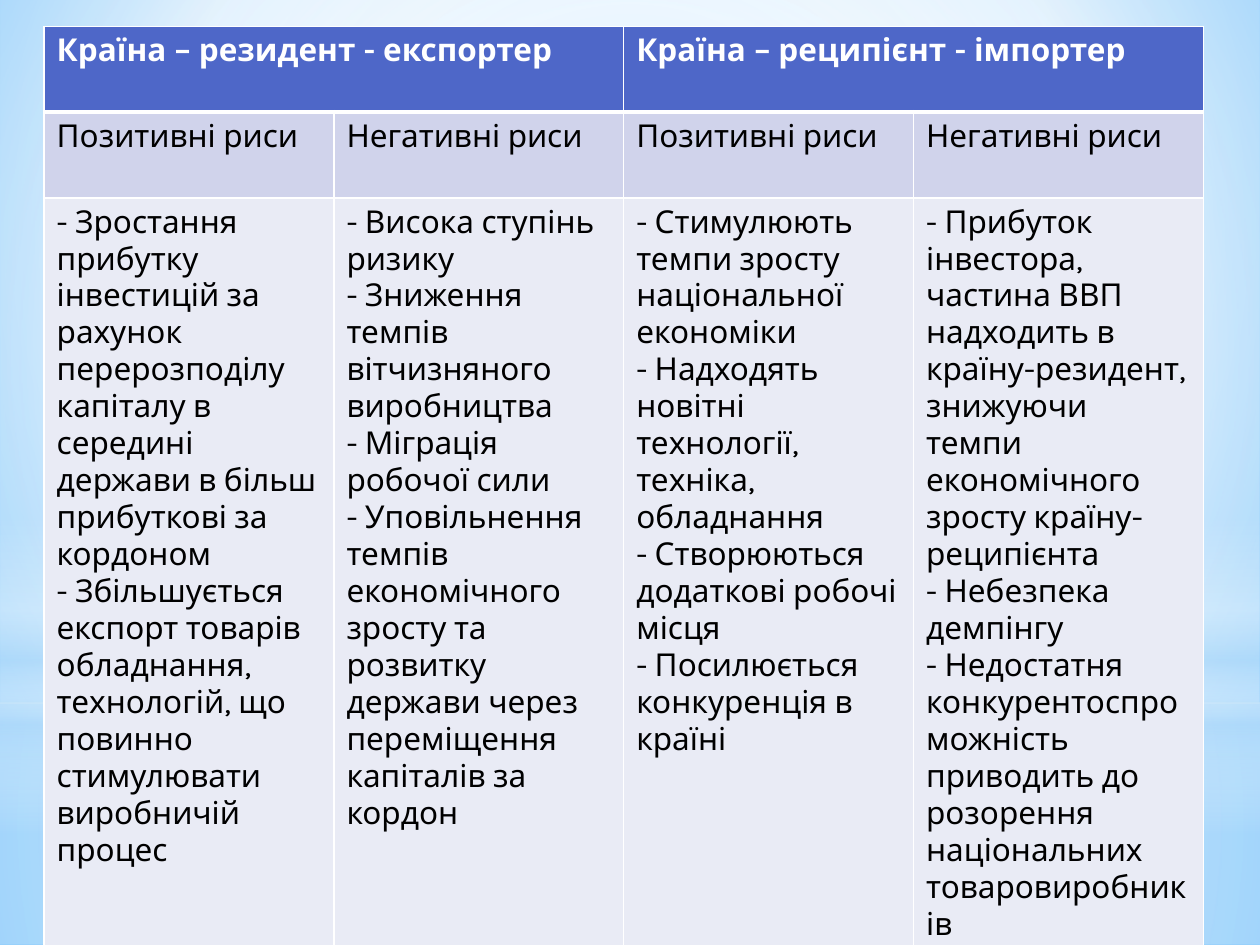
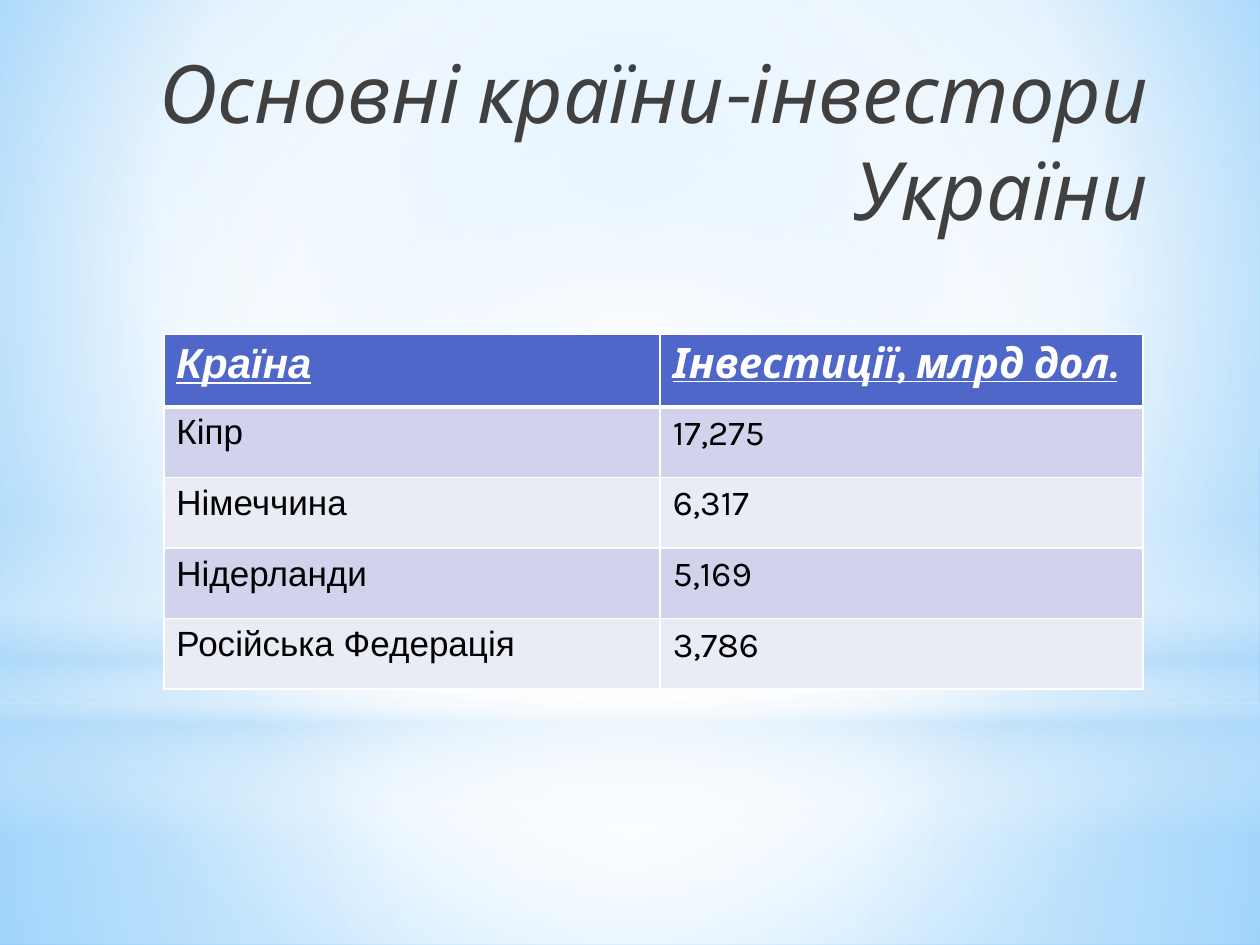
from lxml import etree
from pptx import Presentation
from pptx.dml.color import RGBColor
from pptx.enum.shapes import MSO_SHAPE
from pptx.enum.text import MSO_ANCHOR, MSO_AUTO_SIZE, PP_ALIGN
from pptx.oxml import parse_xml
from pptx.oxml.ns import nsdecls, qn
from pptx.util import Inches, Pt

# Content
EFFECTS_HEADS = ["Країна – резидент - експортер", "Країна – реципієнт - імпортер"]
EFFECTS_SIDES = ["Позитивні риси", "Негативні риси"] * 2
EFFECTS = [
    ["- Зростання прибутку інвестицій за рахунок перерозподілу капіталу "
     "в середині держави в більш прибуткові за кордоном",
     "- Збільшується експорт товарів обладнання, технологій, що повинно "
     "стимулювати виробничій процес"],
    ["- Висока ступінь ризику",
     "- Зниження темпів вітчизняного виробництва",
     "- Міграція робочої сили",
     "- Уповільнення темпів економічного зросту та розвитку держави "
     "через переміщення капіталів за кордон"],
    ["- Стимулюють темпи зросту національної економіки",
     "- Надходять новітні технології, техніка, обладнання",
     "- Створюються додаткові робочі місця",
     "- Посилюється конкуренція в країні"],
    ["- Прибуток інвестора, частина ВВП надходить в країну-резидент, "
     "знижуючи темпи економічного зросту країну-реципієнта",
     "- Небезпека демпінгу",
     "- Недостатня конкурентоспроможність приводить до розорення "
     "національних товаровиробників"],
]
INVESTORS_TITLE = "Основні країни-інвестори України"
INVESTORS = [
    ("Країна", "Інвестиції, млрд дол."),
    ("Кіпр", "17,275"),
    ("Німеччина", "6,317"),
    ("Нідерланди", "5,169"),
    ("Російська Федерація", "3,786"),
]

# Shared look
MAIN_FONT, COUNTRY_FONT = "Karla", "Arial"
WHITE, BLACK, TITLE_GREY = "FFFFFF", "000000", "404040"
SKY = "B4DCFA"
HEAD_FILL, BAND_FILLS = "4E67C8", ("E9EBF5", "D0D3EB")

# Gradient stops: position %, colour, opacity %
BACKDROP = [(0, "9ED5FF", 100), (60, WHITE, 100), (100, "5BB9FF", 100)]
BACKDROP_FOCUS = (20, 10, 20, 60)
CENTRE = (50, 50, 50, 50)
# Shape, top, height, stops, focus (None: top to bottom)
LIGHTS = [
    (MSO_SHAPE.RECTANGLE, 5.58, 1.92,
     [(0, WHITE, 91), (37, WHITE, 76), (100, SKY, 79)], CENTRE),
    (MSO_SHAPE.RECTANGLE, 0, 5.58,
     [(0, WHITE, 89), (48, WHITE, 62), (100, SKY, 79)], CENTRE),
    (MSO_SHAPE.RECTANGLE, 4.12, 2.5,
     [(0, WHITE, 0), (29, WHITE, 30), (45, SKY, 40), (55, WHITE, 26),
      (65, SKY, 60), (100, WHITE, 0)], None),
    (MSO_SHAPE.OVAL, 1.75, 5.58, [(0, WHITE, 100), (56, WHITE, 0)], CENTRE),
]


def rgb(colour):
    return RGBColor.from_string(colour)


def set_gradient(holder, stops, focus):
    """Replace the solid fill directly inside holder with a gradient."""
    marks = "".join(
        f'<a:gs pos="{place * 1000}"><a:srgbClr val="{colour}">'
        f'<a:alpha val="{opacity * 1000}"/></a:srgbClr></a:gs>'
        for place, colour, opacity in stops)
    if focus:
        left, top, right, bottom = (side * 1000 for side in focus)
        spread = (f'<a:path path="circle"><a:fillToRect l="{left}" t="{top}" '
                  f'r="{right}" b="{bottom}"/></a:path>')
    else:
        spread = '<a:lin ang="5400000" scaled="0"/>'
    gradient = parse_xml(f'<a:gradFill {nsdecls("a")} rotWithShape="1">'
                         f'<a:gsLst>{marks}</a:gsLst>{spread}</a:gradFill>')
    holder.replace(holder.find(qn("a:solidFill")), gradient)


def light_master(deck, page):
    """Give the master its backdrop; the lights are made on page, then moved."""
    master = deck.slide_master
    master.background.fill.solid()
    set_gradient(master.element.find(".//" + qn("p:bgPr")), BACKDROP, BACKDROP_FOCUS)
    for index, (kind, top, height, stops, focus) in enumerate(LIGHTS):
        light = page.shapes.add_shape(kind, 0, Inches(top), deck.slide_width, Inches(height))
        light.shadow.inherit = False
        light.line.fill.background()
        light.fill.solid()
        set_gradient(light.element.spPr, stops, focus)
        light.element.nvSpPr.cNvPr.set("id", str(100 + index))
        master.shapes.element.insert(2 + index, light.element)


def write(frame, lines, size, colour, font=MAIN_FONT, **styles):
    for index, line in enumerate(lines):
        para = frame.paragraphs[0] if index == 0 else frame.add_paragraph()
        span = para.add_run()
        span.text = line
        span.font.name, span.font.size = font, Pt(size)
        span.font.color.rgb = rgb(colour)
        for style, value in styles.items():
            setattr(span.font, style, value)


def set_borders(cell, row):
    """White 1 pt borders, 3 pt between the header and the body."""
    properties = cell._tc.get_or_add_tcPr()
    widths = {"L": 1, "R": 1, "T": 3 if row == 1 else 1, "B": 3 if row == 0 else 1}
    for index, (side, width) in enumerate(widths.items()):
        line = etree.Element(qn(f"a:ln{side}"), w=str(Pt(width)))
        fill = etree.SubElement(line, qn("a:solidFill"))
        etree.SubElement(fill, qn("a:srgbClr"), val=WHITE)
        properties.insert(index, line)


def add_grid(page, left, top, widths, heights):
    """Add a table with filled and bordered, still empty cells."""
    grid = page.shapes.add_table(
        len(heights), len(widths), Inches(left), Inches(top),
        Inches(sum(widths)), Inches(sum(heights))).table
    grid.first_row = grid.horz_banding = False
    for column, width in zip(grid.columns, widths):
        column.width = Inches(width)
    for row, height in enumerate(heights):
        grid.rows[row].height = Inches(height)
        for cell in grid.rows[row].cells:
            cell.fill.solid()
            cell.fill.fore_color.rgb = rgb(BAND_FILLS[row % 2] if row else HEAD_FILL)
            set_borders(cell, row)
    return grid


def fill_effects(page):
    grid = add_grid(page, 0.35, 0.21, [2.3] * 4, [0.68, 0.68, 5.74])
    for index, head in enumerate(EFFECTS_HEADS):
        cell = grid.cell(0, 2 * index)
        cell.merge(grid.cell(0, 2 * index + 1))
        write(cell.text_frame, [head], 18, WHITE, bold=True)
    for column, (side, points) in enumerate(zip(EFFECTS_SIDES, EFFECTS)):
        write(grid.cell(1, column).text_frame, [side], 18, BLACK)
        write(grid.cell(2, column).text_frame, points, 18, BLACK)


def fill_investors(page):
    title = page.shapes.title
    title.left, title.top = Inches(1.06), Inches(0.29)
    title.width, title.height = Inches(8.15), Inches(1.25)
    frame = title.text_frame
    frame.word_wrap = True
    frame.auto_size = MSO_AUTO_SIZE.NONE
    frame.vertical_anchor = MSO_ANCHOR.TOP
    write(frame, [INVESTORS_TITLE], 46, TITLE_GREY, italic=True)
    frame.paragraphs[0].alignment = PP_ALIGN.RIGHT

    grid = add_grid(page, 1.3, 2.65, [3.94, 3.83], [0.58] + [0.56] * 4)
    for row, texts in enumerate(INVESTORS):
        for column, (text, font) in enumerate(zip(texts, (COUNTRY_FONT, MAIN_FONT))):
            frame = grid.cell(row, column).text_frame
            if row == 0:
                write(frame, [text], 24, WHITE, font, bold=True, italic=True, underline=True)
            else:
                write(frame, [text], 20, BLACK, font)


def main():
    deck = Presentation()
    deck.slide_width, deck.slide_height = Inches(10), Inches(7.5)
    title_only, blank = deck.slide_layouts[5], deck.slide_layouts[6]
    effects_page = deck.slides.add_slide(blank)
    light_master(deck, effects_page)
    fill_effects(effects_page)
    fill_investors(deck.slides.add_slide(title_only))
    deck.save("out.pptx")


if __name__ == "__main__":
    main()
